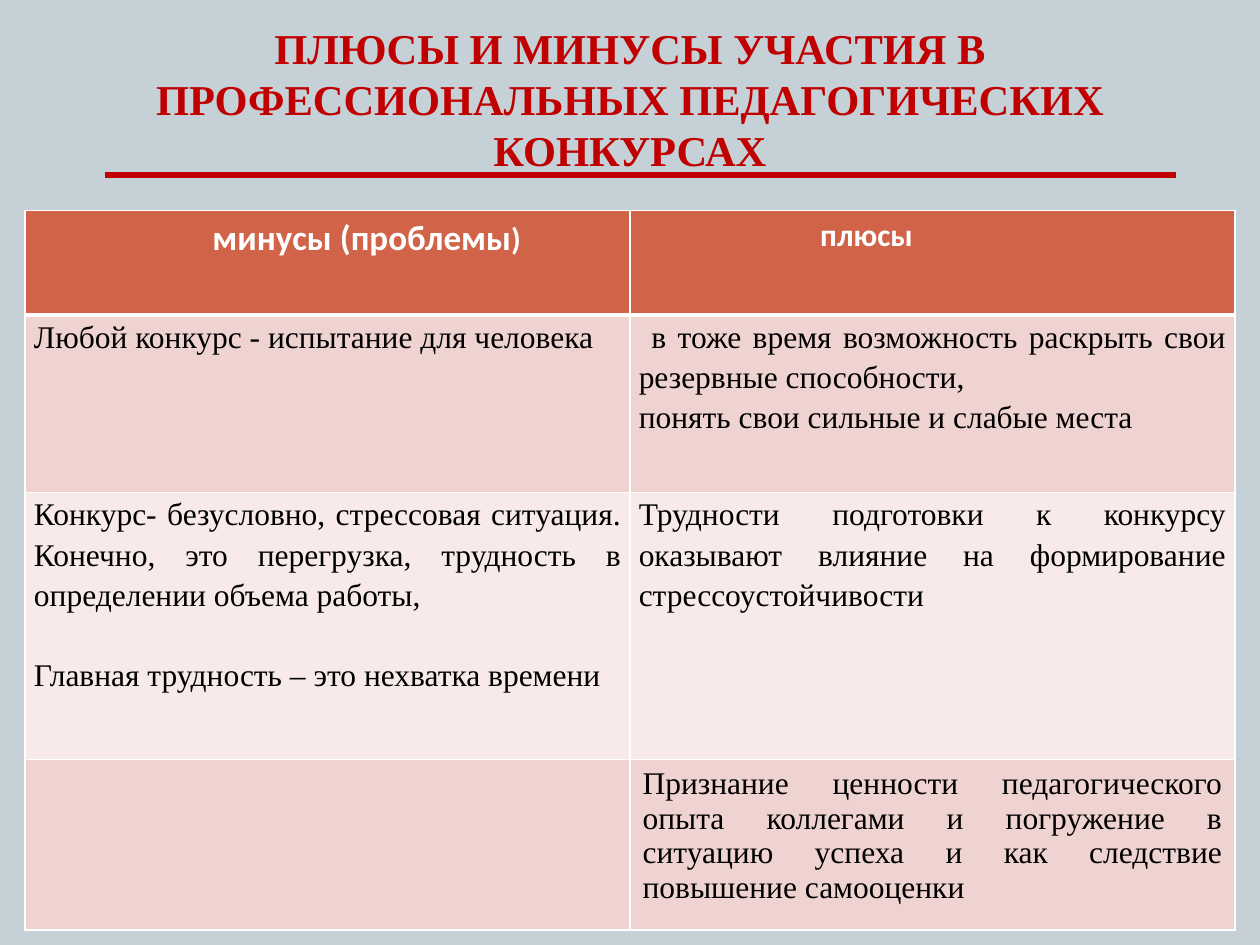
from lxml import etree
from pptx import Presentation
from pptx.dml.color import RGBColor
from pptx.enum.shapes import MSO_CONNECTOR as CONN
from pptx.enum.text import MSO_ANCHOR as ANCHOR, PP_ALIGN as ALIGN
from pptx.oxml import parse_xml
from pptx.oxml.ns import nsdecls, qn
from pptx.util import Inches, Pt

RED, WHITE, BLACK = "C00000", "FFFFFF", "000000"
HEADER, DARK_BAND, LIGHT_BAND = "D16349", "EED3D0", "F7EAE9"
SERIF, SANS = "Times New Roman", "Calibri"


def rgb(value):
    return RGBColor.from_string(value)


class SlideBuilder:
    body_size = 18
    title_size = 24.3

    def __init__(self, prs, background):
        self.s = prs.slides.add_slide(prs.slide_layouts[6])
        fill = self.s.background.fill
        fill.solid()
        fill.fore_color.rgb = rgb(background)

    def font(self, p, name, size, color, bold):
        f = p.font
        f.name, f.size, f.bold = name, Pt(size), bold
        f.color.rgb = rgb(color)

    def indent(self, p, left=0, first=0):
        pPr = p._p.get_or_add_pPr()
        pPr.set("marL", str(Inches(left)))
        pPr.set("indent", str(Inches(first)))

    def title(self, text, x, y, w, h):
        tf = self.s.shapes.add_textbox(Inches(x), Inches(y), Inches(w), Inches(h)).text_frame
        tf.word_wrap = True
        tf.margin_top = tf.margin_bottom = 0
        tf.vertical_anchor = ANCHOR.MIDDLE
        p = tf.paragraphs[0]
        p.text = text
        p.alignment = ALIGN.CENTER
        self.font(p, SERIF, self.title_size, RED, True)

    def rule(self, x1, x2, y):
        line = self.s.shapes.add_connector(CONN.STRAIGHT, Inches(x1), Inches(y), Inches(x2), Inches(y))
        line.line.color.rgb = rgb(RED)
        line.line.width = Pt(3)
        etree.SubElement(line._element.spPr, qn("a:effectLst"))

    def table(self, x, y, widths, heights):
        frame = self.s.shapes.add_table(
            len(heights), len(widths), Inches(x), Inches(y), Inches(sum(widths)), Inches(sum(heights))
        )
        for col, w in zip(frame.table.columns, widths):
            col.width = Inches(w)
        for row, h in zip(frame.table.rows, heights):
            row.height = Inches(h)
        return frame.table

    def cell_style(self, cell, color, top=1, bottom=1):
        cell.fill.solid()
        cell.fill.fore_color.rgb = rgb(color)
        tcPr = cell._tc.get_or_add_tcPr()
        for i, (side, width) in enumerate(zip("LRTB", (1, 1, top, bottom))):
            tcPr.insert(i, parse_xml(
                f'<a:ln{side} {nsdecls("a")} w="{Pt(width)}"><a:solidFill>'
                f'<a:srgbClr val="{WHITE}"/></a:solidFill></a:ln{side}>'
            ))

    def heading(self, cell, parts, align, left):
        p = cell.text_frame.paragraphs[0]
        p.alignment = align
        self.indent(p, left)
        self.font(p, SANS, self.body_size, WHITE, True)
        for text, size in parts:
            r = p.add_run()
            r.text = text
            r.font.size = Pt(size)

    def body(self, cell, lines, spacing=1.15, compact=True):
        if compact:
            cell.margin_left = cell.margin_right = Inches(0.07)
            cell.margin_top = cell.margin_bottom = 0
        tf = cell.text_frame
        for i, (text, first, before) in enumerate(lines):
            p = tf.add_paragraph() if i else tf.paragraphs[0]
            p.text = text
            p.alignment = ALIGN.JUSTIFY
            p.line_spacing = spacing
            p.space_before = Pt(before)
            self.indent(p, first=first)
            self.font(p, SERIF, self.body_size, BLACK, False)


def main():
    prs = Presentation()
    prs.slide_width, prs.slide_height = Inches(10), Inches(7.5)
    b = SlideBuilder(prs, "C5D1D7")
    table = b.table(0.2, 1.67, [4.8, 4.8], [0.83, 1.41, 2.12, 1.35])

    for row, color in enumerate((HEADER, DARK_BAND, LIGHT_BAND, DARK_BAND)):
        for col in range(2):
            b.cell_style(table.cell(row, col), color,
                         top=3 if row == 1 else 1, bottom=3 if row == 0 else 1)

    b.heading(table.cell(0, 0), [("минусы (проблемы", 20), (")", 18)], ALIGN.CENTER, 0.62)
    b.heading(table.cell(0, 1), [("плюсы", 18)], ALIGN.LEFT, 1.41)

    b.body(table.cell(1, 0), [("Любой конкурс - испытание для человека", 0, 0)])
    b.body(table.cell(1, 1), [
        ("в тоже время возможность раскрыть свои резервные способности,", 0.1, 0),
        ("понять свои сильные и слабые места", 0, 0),
    ])
    b.body(table.cell(2, 0), [
        ("Конкурс- безусловно, стрессовая ситуация. "
         "Конечно, это перегрузка, трудность в определении объема работы,", 0, 0),
        ("Главная трудность – это нехватка времени", 0, 23),
    ])
    b.body(table.cell(2, 1), [
        ("Трудности подготовки к конкурсу оказывают влияние на формирование стрессоустойчивости", 0, 0),
    ])
    b.body(table.cell(3, 1), [
        ("Признание ценности педагогического опыта коллегами и погружение в ситуацию успеха "
         "и как следствие повышение самооценки", 0, 0),
    ], spacing=1.0, compact=False)

    b.title("ПЛЮСЫ И МИНУСЫ УЧАСТИЯ В ПРОФЕССИОНАЛЬНЫХ ПЕДАГОГИЧЕСКИХ КОНКУРСАХ", 0.5, 0.17, 9, 1.22)
    b.rule(0.83, 9.33, 1.39)
    prs.save("out.pptx")


if __name__ == "__main__":
    main()
